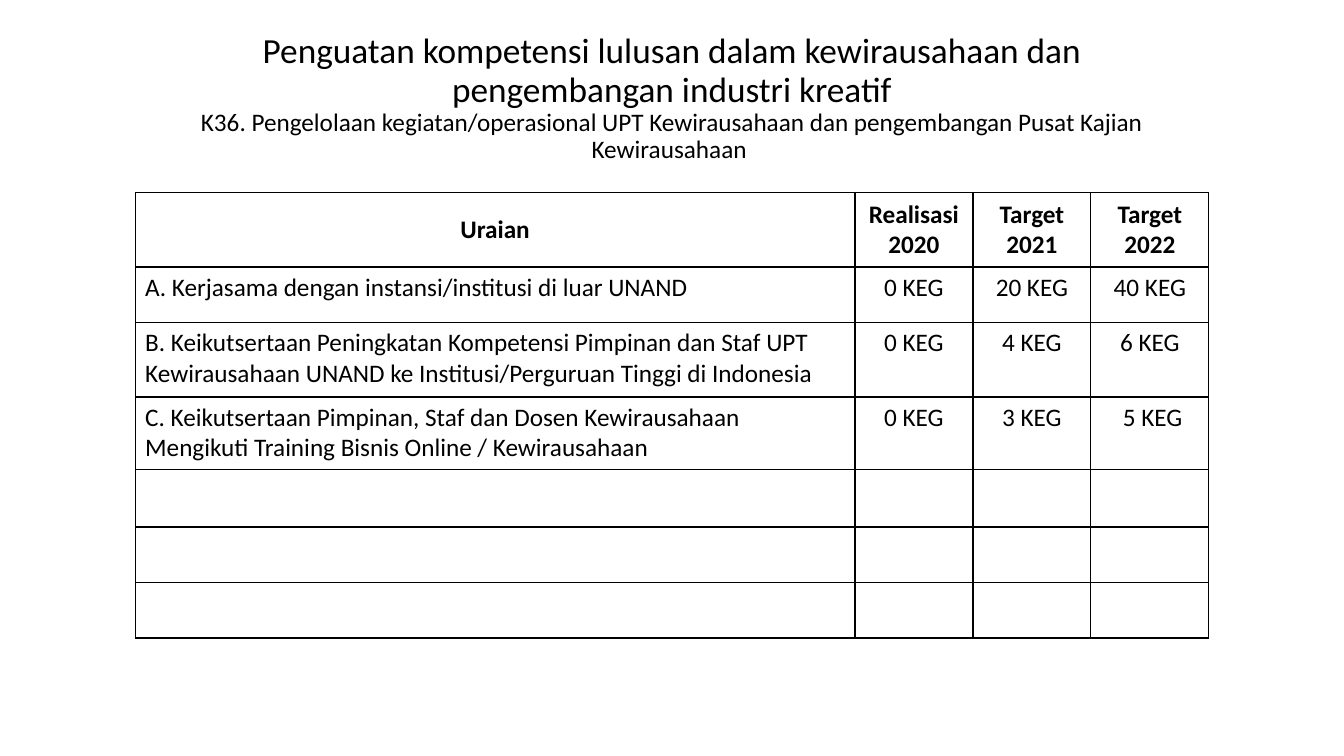
"""Build a slide with a heading and a table of entrepreneurship activity targets."""
from dataclasses import dataclass

from lxml import etree
from pptx import Presentation
from pptx.dml.color import RGBColor
from pptx.enum.text import MSO_ANCHOR, PP_ALIGN
from pptx.oxml.ns import qn
from pptx.util import Inches, Pt

CENTER, LEFT = PP_ALIGN.CENTER, PP_ALIGN.LEFT
MIDDLE, TOP = MSO_ANCHOR.MIDDLE, MSO_ANCHOR.TOP


@dataclass(frozen=True)
class Theme:
    font: str = "Calibri"
    ink: str = "000000"
    title_size: float = 25.2
    body_size: float = 18
    border: float = 1


THEME = Theme()


def style_paragraph(paragraph, size, alignment, bold=False):
    paragraph.alignment = alignment
    paragraph.font.name = THEME.font
    paragraph.font.size = Pt(size)
    paragraph.font.bold = bold
    paragraph.font.color.rgb = RGBColor.from_string(THEME.ink)


def add_borders(cell):
    properties = cell._tc.get_or_add_tcPr()
    for position, side in enumerate(("a:lnL", "a:lnR", "a:lnT", "a:lnB")):
        line = etree.Element(qn(side), w=str(Pt(THEME.border)))
        fill = etree.SubElement(line, qn("a:solidFill"))
        etree.SubElement(fill, qn("a:srgbClr"), val=THEME.ink)
        properties.insert(position, line)


presentation = Presentation()
presentation.slide_width = Inches(13.33)
presentation.slide_height = Inches(7.5)
slide = presentation.slides.add_slide(presentation.slide_layouts[6])

title_box = slide.shapes.add_textbox(Inches(1.38), Inches(0.44), Inches(10.57), Inches(1.08))
title_frame = title_box.text_frame
title_frame.word_wrap = True
title_frame.vertical_anchor = MIDDLE
title_frame.text = (
    "Penguatan kompetensi lulusan dalam kewirausahaan dan pengembangan industri kreatif\n"
    "K36. Pengelolaan kegiatan/operasional UPT Kewirausahaan dan pengembangan "
    "Pusat Kajian Kewirausahaan "
)
for paragraph, size in zip(title_frame.paragraphs, (THEME.title_size, THEME.body_size)):
    style_paragraph(paragraph, size, CENTER)
    paragraph.line_spacing = 0.9

rows = [
    ("Uraian", "Realisasi\n2020", "Target\n2021", "Target\n2022"),
    ("A. Kerjasama dengan instansi/institusi di luar UNAND", "0 KEG", "20 KEG", "40 KEG"),
    ("B. Keikutsertaan Peningkatan Kompetensi Pimpinan dan Staf UPT Kewirausahaan "
     "UNAND ke Institusi/Perguruan Tinggi di Indonesia", "0 KEG", "4 KEG", "6 KEG"),
    ("C. Keikutsertaan Pimpinan, Staf dan Dosen Kewirausahaan Mengikuti Training "
     "Bisnis Online / Kewirausahaan", "0 KEG", "3 KEG", " 5 KEG"),
] + [("",) * 4] * 3
column_widths = (7.14, 1.17, 1.17, 1.17)
row_heights = (0.74, 0.55, 0.74, 0.72, 0.57, 0.55, 0.55)

table = slide.shapes.add_table(
    len(rows), len(column_widths), Inches(1.34), Inches(1.91),
    Inches(sum(column_widths)), Inches(sum(row_heights)),
).table
for column, width in zip(table.columns, column_widths):
    column.width = Inches(width)
for row, height in zip(table.rows, row_heights):
    row.height = Inches(height)

for row_index, texts in enumerate(rows):
    is_header = row_index == 0
    for column_index, text in enumerate(texts):
        cell = table.cell(row_index, column_index)
        cell.text = text
        cell.fill.background()
        cell.vertical_anchor = MIDDLE if is_header else TOP
        add_borders(cell)
        alignment = CENTER if is_header or column_index > 0 else LEFT
        for paragraph in cell.text_frame.paragraphs:
            style_paragraph(paragraph, THEME.body_size, alignment, is_header)

presentation.save("out.pptx")
